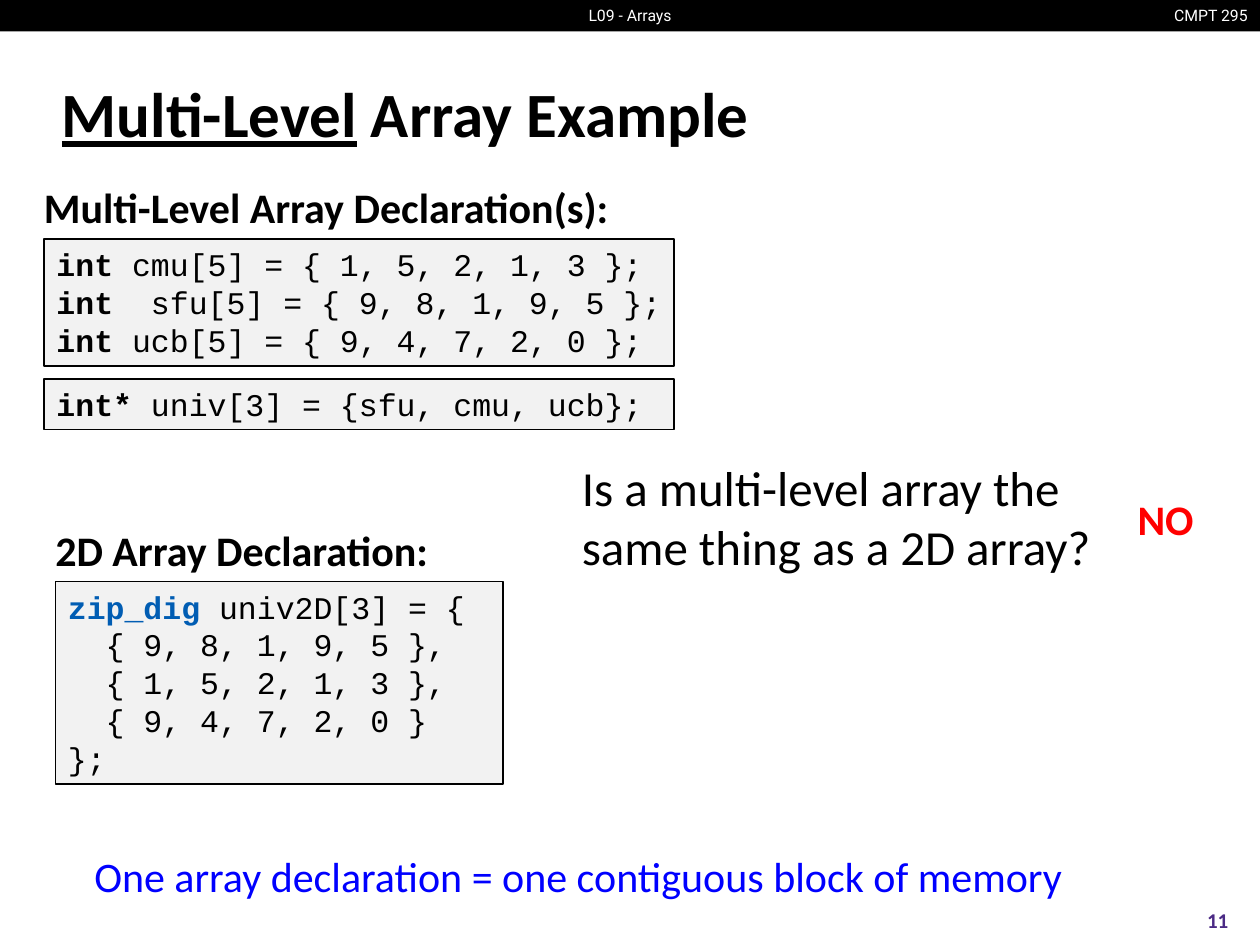
from lxml import etree
from pptx import Presentation, util as u
from pptx.dml.color import RGBColor
from pptx.enum import shapes, text

COLS, ROWS = 100, 75
MID, RIGHT = text.PP_ALIGN.CENTER, text.PP_ALIGN.RIGHT
MIDDLE = text.MSO_ANCHOR.MIDDLE
HEAD = dict(name="Roboto", size=9, color="FFFFFF")
TITLE = dict(name="Calibri", size=36, color="000000", bold=True)
HEADING = dict(TITLE, size=24)
QUESTION = dict(TITLE, size=28, bold=False)
CODE = dict(name="Courier New", size=18, color="000000", bold=False)
KEYWORD = dict(CODE, bold=True)
TYPE = dict(KEYWORD, color="015DB3")

prs = Presentation()
prs.slide_width, prs.slide_height = u.Inches(10), u.Inches(7.5)


def rgb(value):
    """Turn a hex string into a colour."""
    return RGBColor.from_string(value)


def grid(box):
    """Turn columns and rows of the slide grid into lengths."""
    col, row = prs.slide_width / COLS, prs.slide_height / ROWS
    return [round(n * unit) for n, unit in zip(box, (col, row, col, row))]


def write(tf, lines, align=None, anchor=text.MSO_ANCHOR.TOP, wrap=False):
    """Fill a frame with paragraphs, each a list of (words, format) runs."""
    tf.word_wrap, tf.vertical_anchor = wrap, anchor
    for i, runs in enumerate(lines):
        p = tf.paragraphs[0] if i == 0 else tf.add_paragraph()
        p.alignment = align
        for words, fmt in runs:
            for n, part in enumerate(words.split("\n")):
                if n:
                    p.add_line_break()
                r = p.add_run()
                r.text = part
                for key, value in fmt.items():
                    if key == "color":
                        r.font.color.rgb = rgb(value)
                    else:
                        setattr(r.font, key, u.Pt(value) if key == "size" else value)


def label(s, box, words, fmt, **layout):
    """Place one line of plain text."""
    write(s.shapes.add_textbox(*grid(box)).text_frame, [[(words, fmt)]], **layout)


def panel(s, box, fill, line=None):
    """Place a flat rectangle with an optional outline."""
    sp = s.shapes.add_shape(shapes.MSO_SHAPE.RECTANGLE, *grid(box))
    sp.shadow.inherit = False
    sp.fill.solid()
    sp.fill.fore_color.rgb = rgb(fill)
    if line:
        sp.line.color.rgb = rgb(line)
        sp.line.width = u.Pt(1)
    else:
        sp.line.fill.background()
    return sp


def header(s, box):
    """Draw the black bar with the lecture and course names."""
    x, y, w, h = box
    panel(s, box, "000000")
    label(s, (x + w - 8.1, y, 8.1, h), "CMPT 295", HEAD, align=RIGHT)
    label(s, (x + w / 2 - 4.45, y, 8.9, h), "L09 - Arrays", HEAD, align=MID)


def title(s, box):
    """Move and fill the title placeholder."""
    sp = s.shapes.title
    sp.left, sp.top, sp.width, sp.height = grid(box)
    runs = [("Multi-Level", dict(TITLE, underline=True)), (" Array Example", TITLE)]
    write(sp.text_frame, [runs], text.PP_ALIGN.LEFT, MIDDLE, True)


def declaration(s, box, heading, heading_width, blocks, gap=1):
    """Stack a heading and its code blocks from the top of the box."""
    x, y, w, h = box
    label(s, (x - 1, y, heading_width, 5), heading, HEADING)
    y += 5.05
    line = (h - 5.05 - gap * (len(blocks) - 1) - len(blocks)) / sum(map(len, blocks))
    for lines in blocks:
        height = line * len(lines) + 1
        sp = panel(s, (x, y, w, height), "F2F2F2", "000000")
        write(sp.text_frame, lines, text.PP_ALIGN.LEFT, wrap=True)
        y += height + gap


def question(s, box):
    """Ask the question with its answer at the right."""
    x, y, w, h = box
    label(s, (x, y, w - 6.9, h), "Is a multi-level array the \nsame thing as a 2D array?", QUESTION)
    label(s, (x + w - 6.5, y + 2.9, 6.5, 5), "NO", dict(HEADING, color="FF0000"))


def footer(s, box):
    """State the conclusion and the page number."""
    x, y, w, h = box
    label(s, (x, y, 82.4, 5), "One array declaration = one contiguous block of memory",
          dict(HEADING, color="0000FF", bold=False))
    label(s, (x + w - 6.7, y + h - 4, 6.7, 4), "11",
          dict(HEADING, size=12, color="4B2A85"), align=MID, anchor=MIDDLE, wrap=True)


def main():
    """Build the slide and save it."""
    s = prs.slides.add_slide(prs.slide_layouts[5])
    header(s, (0, 0, COLS, 2.5))
    title(s, (3.9, 4.8, 91.9, 8.3))
    arrays = [("int ", "cmu[5] = { 1, 5, 2, 1, 3 };"),
              ("int  ", "sfu[5] = { 9, 8, 1, 9, 5 };"),
              ("int ", "ucb[5] = { 9, 4, 7, 2, 0 };")]
    declaration(s, (3.5, 13.9, 50, 20.2), "Multi-Level Array Declaration(s):", 47.3,
                [[[(kind, KEYWORD), (rest, CODE)] for kind, rest in arrays],
                 [[("int*", KEYWORD), (" univ[3] = {sfu, cmu, ucb};", CODE)]]])
    rows = ["  { 9, 8, 1, 9, 5 },", "  { 1, 5, 2, 1, 3 },", "  { 9, 4, 7, 2, 0 }", "};"]
    declaration(s, (4.4, 41.1, 35.5, 21.1), "2D Array Declaration:", 31.9,
                [[[("zip_dig", TYPE), (" univ2D[3] = {", CODE)]] + [[(row, CODE)] for row in rows]])
    question(s, (45.2, 35.8, 50.6, 10.4))
    footer(s, (6.5, 67, 93.5, 8))
    prs.save("out.pptx")


if __name__ == "__main__":
    main()
